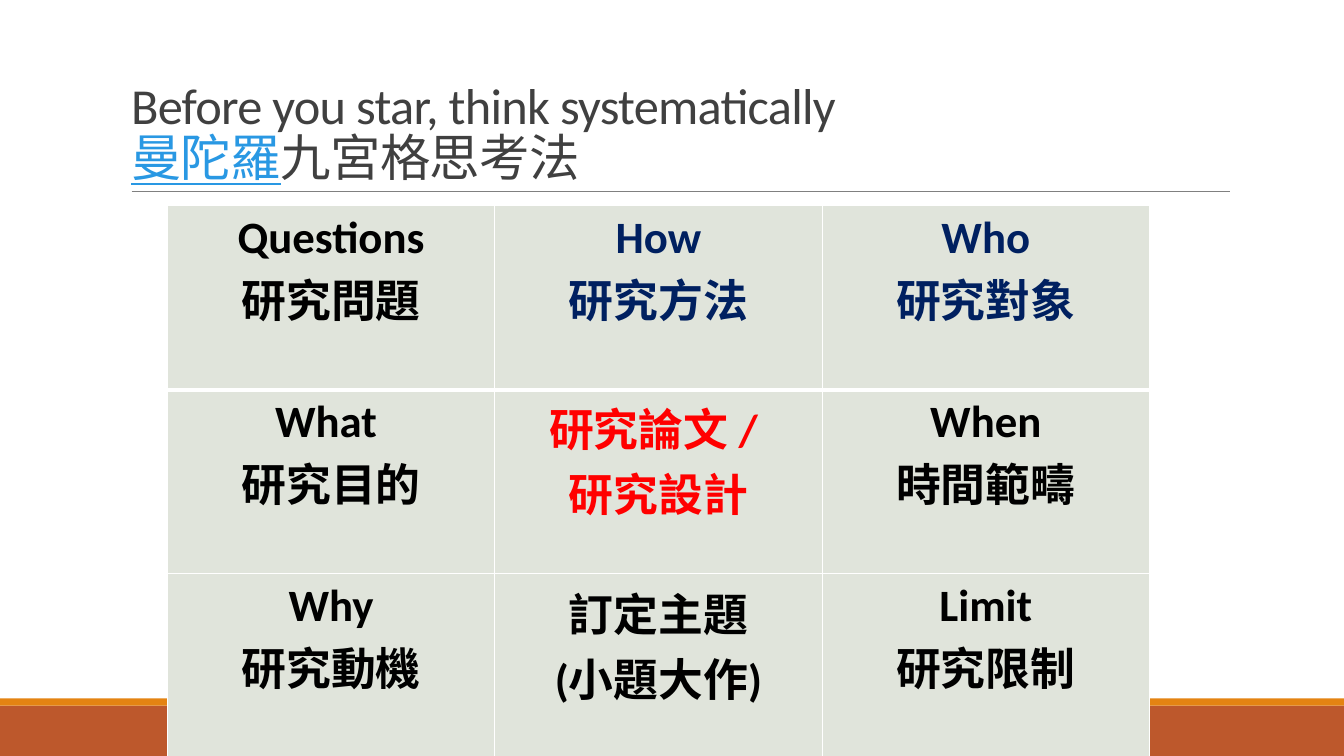
"""Build the slide with the nine-cell thinking grid for research planning."""
from lxml import etree
from pptx import Presentation
from pptx.dml.color import RGBColor
from pptx.enum import shapes, text
from pptx.oxml import ns
from pptx.util import Cm, Pt

RUST = RGBColor(0xBD, 0x58, 0x2C)
ORANGE = RGBColor(0xE4, 0x83, 0x12)
GRAY = RGBColor(0x80, 0x80, 0x80)
CHARCOAL = RGBColor(0x40, 0x40, 0x40)
SKY = RGBColor(0x29, 0x98, 0xE3)
SAGE = RGBColor(0xE0, 0xE4, 0xDB)
BLACK = RGBColor(0x00, 0x00, 0x00)
NAVY = RGBColor(0x00, 0x20, 0x60)
RED = RGBColor(0xFF, 0x00, 0x00)
WHITE = RGBColor(0xFF, 0xFF, 0xFF)

GRID = [
    [("Questions", "研究問題", BLACK), ("How", "研究方法", NAVY), ("Who", "研究對象", NAVY)],
    [("What ", "研究目的", BLACK), ("研究論文 / ", "研究設計", RED), ("When", "時間範疇", BLACK)],
    [("Why", "研究動機", BLACK), ("訂定主題", "(小題大作)", BLACK), ("Limit", "研究限制", BLACK)],
]


def add_border(cell, side, points):
    line = etree.SubElement(cell._tc.get_or_add_tcPr(), ns.qn(f"a:{side}"), w=str(Pt(points)))
    fill = etree.SubElement(line, ns.qn("a:solidFill"))
    etree.SubElement(fill, ns.qn("a:srgbClr"), val=str(WHITE))


deck = Presentation()
deck.slide_width, deck.slide_height = Cm(33.87), Cm(19.05)
page = deck.slides.add_slide(deck.slide_layouts[5])

for top, height, color in [(17.78, 1.27, RUST), (17.6, 0.18, ORANGE)]:
    band = page.shapes.add_shape(
        shapes.MSO_SHAPE.RECTANGLE, 0, Cm(top), deck.slide_width, Cm(height))
    band.shadow.inherit = False
    band.fill.solid()
    band.fill.fore_color.rgb = color
    band.line.fill.background()

rule = page.shapes.add_connector(
    shapes.MSO_CONNECTOR.STRAIGHT, Cm(3.32), Cm(4.82), Cm(31), Cm(4.82))
rule.line.color.rgb = GRAY
rule.line.width = Pt(0.5)
etree.SubElement(rule._element.spPr, ns.qn("a:effectLst"))

title = page.shapes.title
title.left, title.top, title.width, title.height = Cm(3.05), Cm(0.78), Cm(27.94), Cm(4.05)
frame = title.text_frame
frame.word_wrap = True
frame.auto_size = text.MSO_AUTO_SIZE.NONE
frame.vertical_anchor = text.MSO_ANCHOR.BOTTOM
para = frame.paragraphs[0]
para.alignment = text.PP_ALIGN.LEFT
para.line_spacing = 0.85
para.font.name = "Calibri"
para.font.size = Pt(36)
for words, color, underlined in [
    ("Before you star, think systematically", CHARCOAL, False),
    ("曼陀羅", SKY, True),
    ("九宮格思考法", CHARCOAL, False),
]:
    if underlined:
        para.add_line_break()
    span = para.add_run()
    span.text = words
    span.font.color.rgb = color
    span.font.underline = underlined
    span.font._element.set("spc", "-50")

table = page.shapes.add_table(3, 3, Cm(4.22), Cm(5.18), Cm(24.75), Cm(13.92)).table
table.first_row = False
table.horz_banding = False
for row, entries in enumerate(GRID):
    for column, (heading, topic, color) in enumerate(entries):
        cell = table.cell(row, column)
        cell.margin_left = cell.margin_right = Cm(0.3)
        cell.margin_top = cell.margin_bottom = Cm(0.13)
        for side in ("lnL", "lnR", "lnT", "lnB"):
            heavy = (row, side) in [(0, "lnB"), (1, "lnT")]
            add_border(cell, side, 3 if heavy else 1)
        cell.fill.solid()
        cell.fill.fore_color.rgb = SAGE
        cell.text = f"{heading}\n{topic}"
        for para in cell.text_frame.paragraphs:
            para.alignment = text.PP_ALIGN.CENTER
            para.font.name = "Calibri"
            para.font.size = Pt(32)
            para.font.bold = True
            para.font.color.rgb = color

deck.save("out.pptx")
